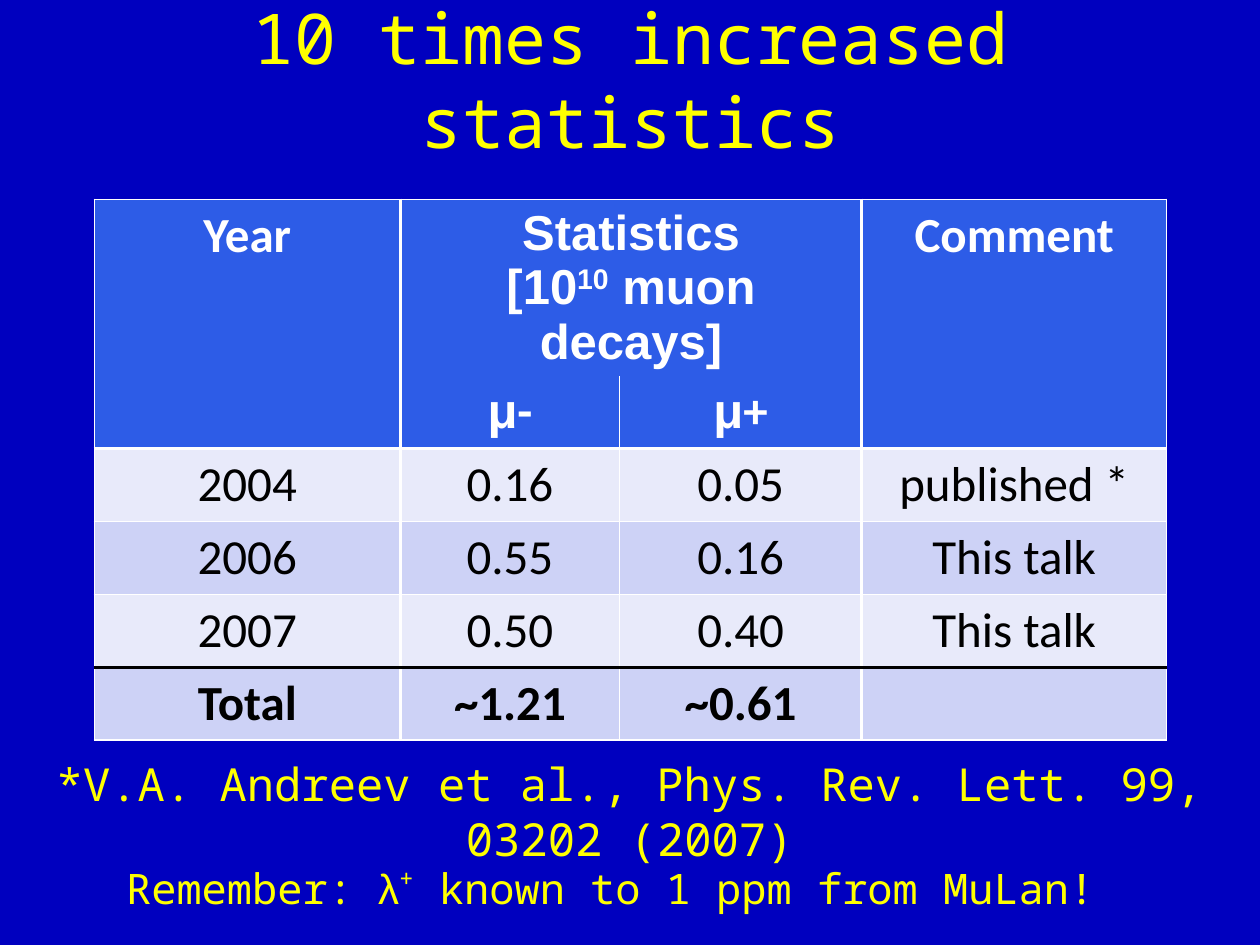
from lxml import etree
from pptx import Presentation
from pptx import util as u
from pptx.dml import color
from pptx.enum import text
from pptx.oxml import ns

COLORS = {
    "background": "0000BF", "accent": "FFFF00", "header": "2D5CE7",
    "light": "E8EAFA", "dark": "CDD2F6", "white": "FFFFFF", "black": "000000",
}
MONO, SANS, BODY = "Noto Sans Mono", "Arial", "Calibri"

COLUMN_WIDTHS = [6.17, 4.42, 4.88, 6.15]
ROW_HEIGHTS = [3.56, 1.45] + [1.47] * 4
COLUMN_LINES = [1, 2.25, 1, 2.25, 1]
ROW_LINES = [("white", 1), None, ("white", 2.25), ("white", 1),
             ("white", 1), ("black", 2.25), ("white", 1)]
ROW_FILLS = ["header", "header", "light", "dark", "light", "dark"]
HEADERS = {
    (0, 0): [[("Year", BODY)]],
    (0, 1): [[("Statistics", SANS)],
             [("[10", SANS), ("10", SANS, 30), (" muon decays]", SANS)]],
    (0, 3): [[("Comment", BODY)]],
    (1, 1): [[("μ", SANS), ("-", BODY)]],
    (1, 2): [[("μ", SANS), ("+", BODY)]],
}
RESULTS = [
    ["2004", "0.16", "0.05", "published *"],
    ["2006", "0.55", "0.16", "This talk"],
    ["2007", "0.50", "0.40", "This talk"],
    ["Total", "~1.21", "~0.61", ""],
]


def rgb(name):
    return color.RGBColor.from_string(COLORS[name])


class Deck:
    def __init__(self, width, height):
        self.presentation = Presentation()
        self.presentation.slide_width = u.Cm(width)
        self.presentation.slide_height = u.Cm(height)
        self.slide = None

    def add_slide(self):
        self.slide = self.presentation.slides.add_slide(
            self.presentation.slide_layouts[5])
        background = self.slide.background.fill
        background.solid()
        background.fore_color.rgb = rgb("background")

    def fill_text(self, frame, paragraphs, size, ink, bold=False):
        for index, pieces in enumerate(paragraphs):
            paragraph = frame.paragraphs[0] if index == 0 else frame.add_paragraph()
            paragraph.alignment = text.PP_ALIGN.CENTER
            for wording, font, *baseline in pieces:
                run = paragraph.add_run()
                run.text = wording
                run.font.name = font
                run.font.size = u.Pt(size)
                run.font.bold = bold
                run.font.color.rgb = rgb(ink)
                if baseline:
                    run._r.get_or_add_rPr().set("baseline", str(baseline[0] * 1000))

    def title(self, wording, left, top, width, height):
        heading = self.slide.shapes.title
        heading.left, heading.top = u.Cm(left), u.Cm(top)
        heading.width, heading.height = u.Cm(width), u.Cm(height)
        frame = heading.text_frame
        frame.auto_size = text.MSO_AUTO_SIZE.NONE
        frame.vertical_anchor = text.MSO_ANCHOR.MIDDLE
        self.fill_text(frame, [[(wording, MONO)]], 40, "accent")

    def note(self, pieces, size, left, top, width, height, anchor, margins):
        box = self.slide.shapes.add_textbox(
            u.Cm(left), u.Cm(top), u.Cm(width), u.Cm(height))
        frame = box.text_frame
        frame.word_wrap = True
        frame.vertical_anchor = anchor
        (frame.margin_left, frame.margin_top,
         frame.margin_right, frame.margin_bottom) = map(u.Cm, margins)
        self.fill_text(frame, [pieces], size, "accent")

    def border(self, cell, side, line):
        properties = cell._tc.get_or_add_tcPr()
        edge = etree.SubElement(properties, ns.qn(f"a:ln{side}"))
        if line is None:
            etree.SubElement(edge, ns.qn("a:noFill"))
            return
        ink, points = line
        edge.set("w", str(u.Pt(points)))
        fill = etree.SubElement(edge, ns.qn("a:solidFill"))
        etree.SubElement(fill, ns.qn("a:srgbClr")).set("val", COLORS[ink])

    def statistics_table(self, left, top):
        table = self.slide.shapes.add_table(
            len(ROW_HEIGHTS), len(COLUMN_WIDTHS), u.Cm(left), u.Cm(top),
            u.Cm(sum(COLUMN_WIDTHS)), u.Cm(sum(ROW_HEIGHTS))).table
        for column, width in zip(table.columns, COLUMN_WIDTHS):
            column.width = u.Cm(width)
        for row, height in zip(table.rows, ROW_HEIGHTS):
            row.height = u.Cm(height)
        for start, end in [((0, 0), (1, 0)), ((0, 1), (0, 2)), ((0, 3), (1, 3))]:
            table.cell(*start).merge(table.cell(*end))

        for r, fill_name in enumerate(ROW_FILLS):
            for c in range(len(COLUMN_WIDTHS)):
                cell = table.cell(r, c)
                right, bottom = c + cell.span_width, r + cell.span_height
                if cell.is_spanned:
                    right, bottom = c + 1, r + 1
                self.border(cell, "L", ("white", COLUMN_LINES[c]))
                self.border(cell, "R", ("white", COLUMN_LINES[right]))
                self.border(cell, "T", ROW_LINES[r])
                self.border(cell, "B", ROW_LINES[bottom])
                cell.fill.solid()
                cell.fill.fore_color.rgb = rgb(fill_name)

        for (r, c), paragraphs in HEADERS.items():
            self.fill_text(table.cell(r, c).text_frame, paragraphs, 28, "white", True)
        for r, values in enumerate(RESULTS, start=2):
            for c, value in enumerate(values):
                self.fill_text(table.cell(r, c).text_frame, [[(value, BODY)]],
                               28, "black", values[0] == "Total")

    def save(self):
        self.presentation.save("out.pptx")


def main():
    deck = Deck(25.4, 19.05)
    deck.add_slide()
    deck.title("10 times increased statistics", 0.85, 0, 23.7, 3.18)
    deck.statistics_table(1.9, 4.02)
    deck.note([("Remember: ", MONO), ("λ", SANS), ("+", MONO, 40),
               (" known to 1 ppm from MuLan!", MONO)],
              24, 0.85, 16.3, 23.7, 3.18, text.MSO_ANCHOR.MIDDLE,
              (0.25, 0.13, 1.05, 0.13))
    deck.note([("*V.A. Andreev et al., Phys. Rev. Lett. 99, 03202 (2007)", MONO)],
              26, 1.06, 15.24, 23.28, 1.12, text.MSO_ANCHOR.TOP, (0, 0, 0, 0))
    deck.save()


if __name__ == "__main__":
    main()
